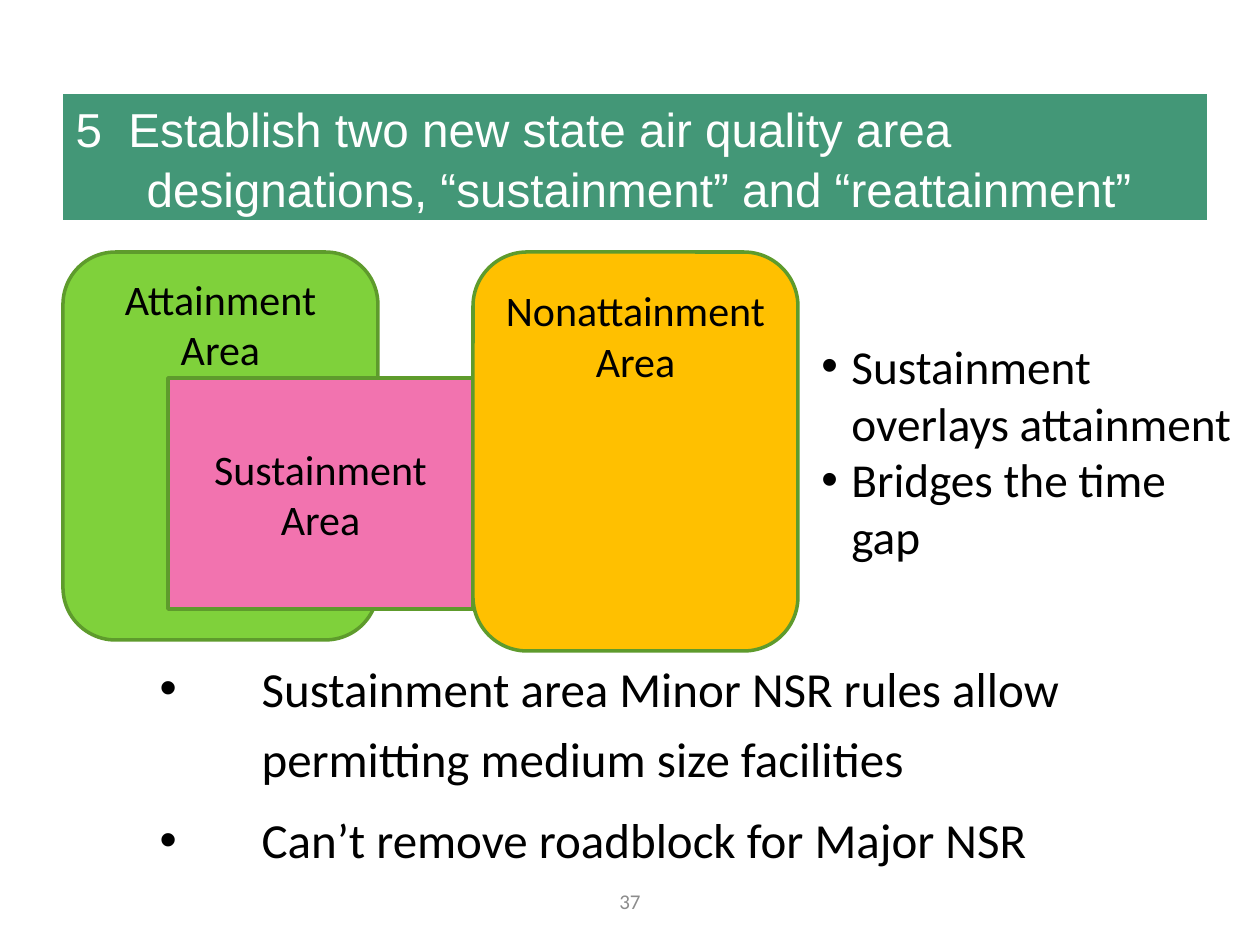
from lxml import etree
from pptx import Presentation
from pptx.dml.color import RGBColor
from pptx.enum.shapes import MSO_SHAPE
from pptx.enum.text import MSO_ANCHOR, MSO_AUTO_SIZE, PP_ALIGN
from pptx.oxml.ns import qn
from pptx.util import Emu, Pt

PX = 914400 // 126
RECTANGLE, ROUNDED = MSO_SHAPE.RECTANGLE, MSO_SHAPE.ROUNDED_RECTANGLE
TOP, MIDDLE = MSO_ANCHOR.TOP, MSO_ANCHOR.MIDDLE
LEFT, CENTER = PP_ALIGN.LEFT, PP_ALIGN.CENTER


def px(length):
    return Emu(length * PX)


def color(hex_string):
    return RGBColor.from_string(hex_string)


def place(shape, box):
    shape.left, shape.top, shape.width, shape.height = map(px, box)


def set_text(shape, texts, size, font="Calibri", ink="000000", align=LEFT, anchor=TOP):
    """Fill a shape with one paragraph per text and return the paragraphs."""
    frame = shape.text_frame
    frame.text = "\n".join(texts)
    frame.word_wrap = True
    frame.auto_size = MSO_AUTO_SIZE.NONE
    frame.vertical_anchor = anchor
    for paragraph in frame.paragraphs:
        paragraph.alignment = align
        paragraph.space_before = Pt(0)
        paragraph.font.name = font
        paragraph.font.size = Pt(size)
        paragraph.font.color.rgb = color(ink)
    return frame.paragraphs


def set_hanging(paragraph, margin, hang, bullet=None):
    properties = paragraph._p.get_or_add_pPr()
    properties.set("marL", str(px(margin)))
    properties.set("indent", str(-px(hang)))
    if bullet:
        properties.insert_element_before(
            etree.Element(qn("a:buFont"), typeface="Arial"), "a:defRPr")
        properties.insert_element_before(
            etree.Element(qn("a:buChar"), char=bullet), "a:defRPr")


def add_banner(slide, box):
    title = slide.shapes.title
    place(title, box)
    title.fill.solid()
    title.fill.fore_color.rgb = color("439777")
    heading = "5  Establish two new state air quality area designations, “sustainment” and “reattainment”"
    for paragraph in set_text(title, [heading], 27.2, "Arial", "FFFFFF", anchor=MIDDLE):
        paragraph.line_spacing = 1.05
        set_hanging(paragraph, 71, 71)


def add_area(slide, kind, box, label, fill, anchor=TOP, top_margin=6):
    area = slide.shapes.add_shape(kind, *map(px, box))
    area.shadow.inherit = False
    area.fill.solid()
    area.fill.fore_color.rgb = color(fill)
    area.line.color.rgb = color("5E9B2C")
    area.line.width = Pt(2)
    set_text(area, [label], 24, align=CENTER, anchor=anchor)
    area.text_frame.margin_top = px(top_margin)


def add_diagram(slide, left, top):
    """Sustainment bridges the attainment and nonattainment areas."""
    add_area(slide, ROUNDED, (left, top, 315, 388), "Attainment Area", "7FD13B")
    add_area(slide, RECTANGLE, (left + 105, top + 126, 305, 231),
             "Sustainment Area", "F273AF", MIDDLE)
    add_area(slide, ROUNDED, (left + 410, top, 325, 399),
             "Nonattainment Area", "FFC000", top_margin=17)


def add_side_notes(slide, box):
    notes = slide.shapes.add_textbox(*map(px, box))
    texts = ["Sustainment\voverlays attainment", "Bridges the time\vgap"]
    for paragraph in set_text(notes, texts, 27):
        set_hanging(paragraph, 30, 30, "•")


def add_rule_list(slide, box):
    body = slide.placeholders[1]
    place(body, box)
    texts = ["Sustainment area Minor NSR rules allow permitting medium size facilities",
             "Can’t remove roadblock for Major NSR"]
    for paragraph in set_text(body, texts, 28):
        paragraph.line_spacing = 1.2
        paragraph.space_after = Pt(6)
        set_hanging(paragraph, 165, 102, "•")


def add_page_number(slide, box):
    number = slide.shapes.add_textbox(*map(px, box))
    set_text(number, ["37"], 12, ink="8C8C8C", align=CENTER, anchor=MIDDLE)


def main():
    presentation = Presentation()
    presentation.slide_width, presentation.slide_height = px(1260), px(945)
    slide = presentation.slides.add_slide(presentation.slide_layouts[1])
    add_banner(slide, (63, 94, 1144, 126))
    add_diagram(slide, 63, 252)
    add_side_notes(slide, (809, 331, 451, 276))
    add_rule_list(slide, (84, 640, 1144, 242))
    add_page_number(slide, (430, 876, 400, 50))
    presentation.save("out.pptx")


if __name__ == "__main__":
    main()
